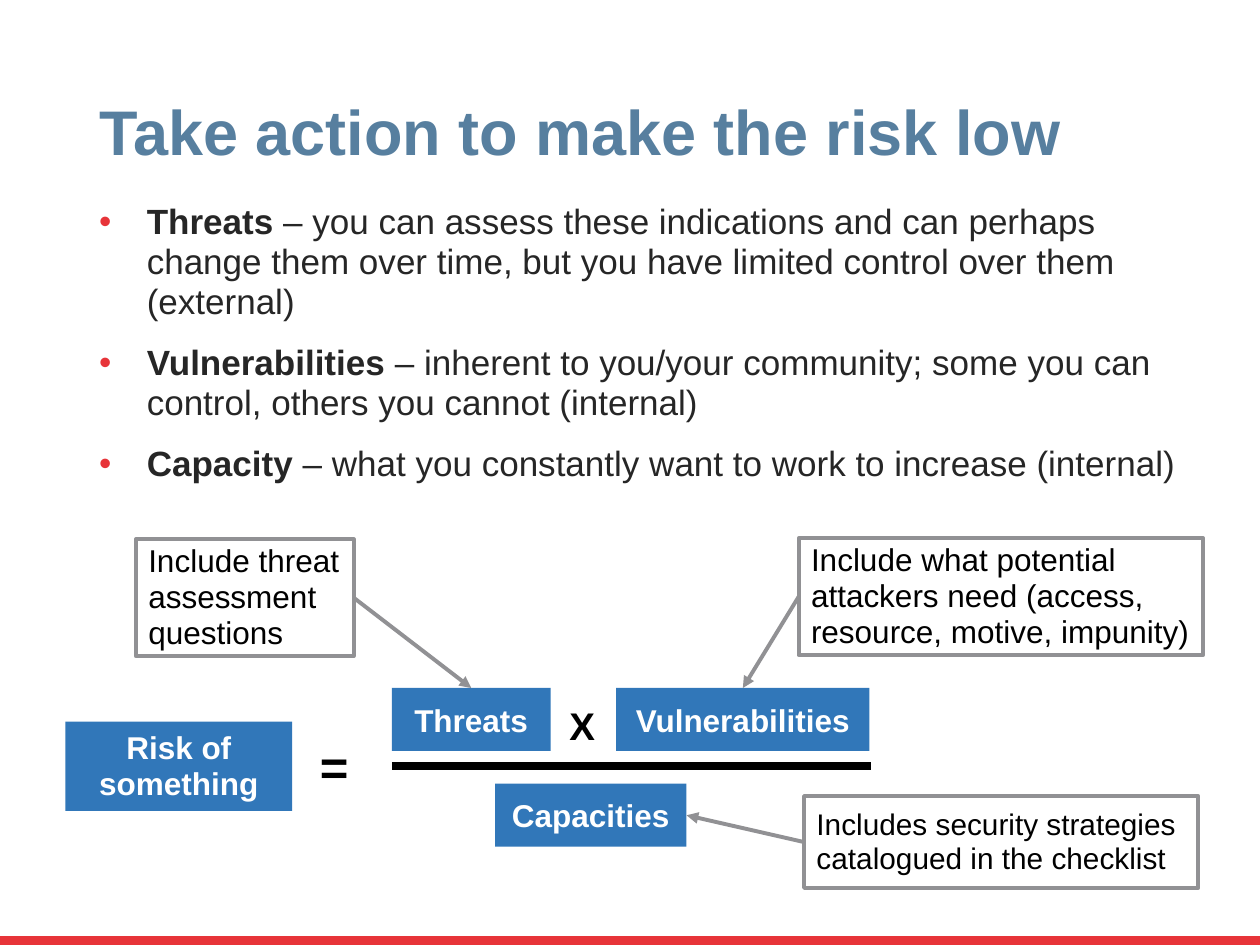
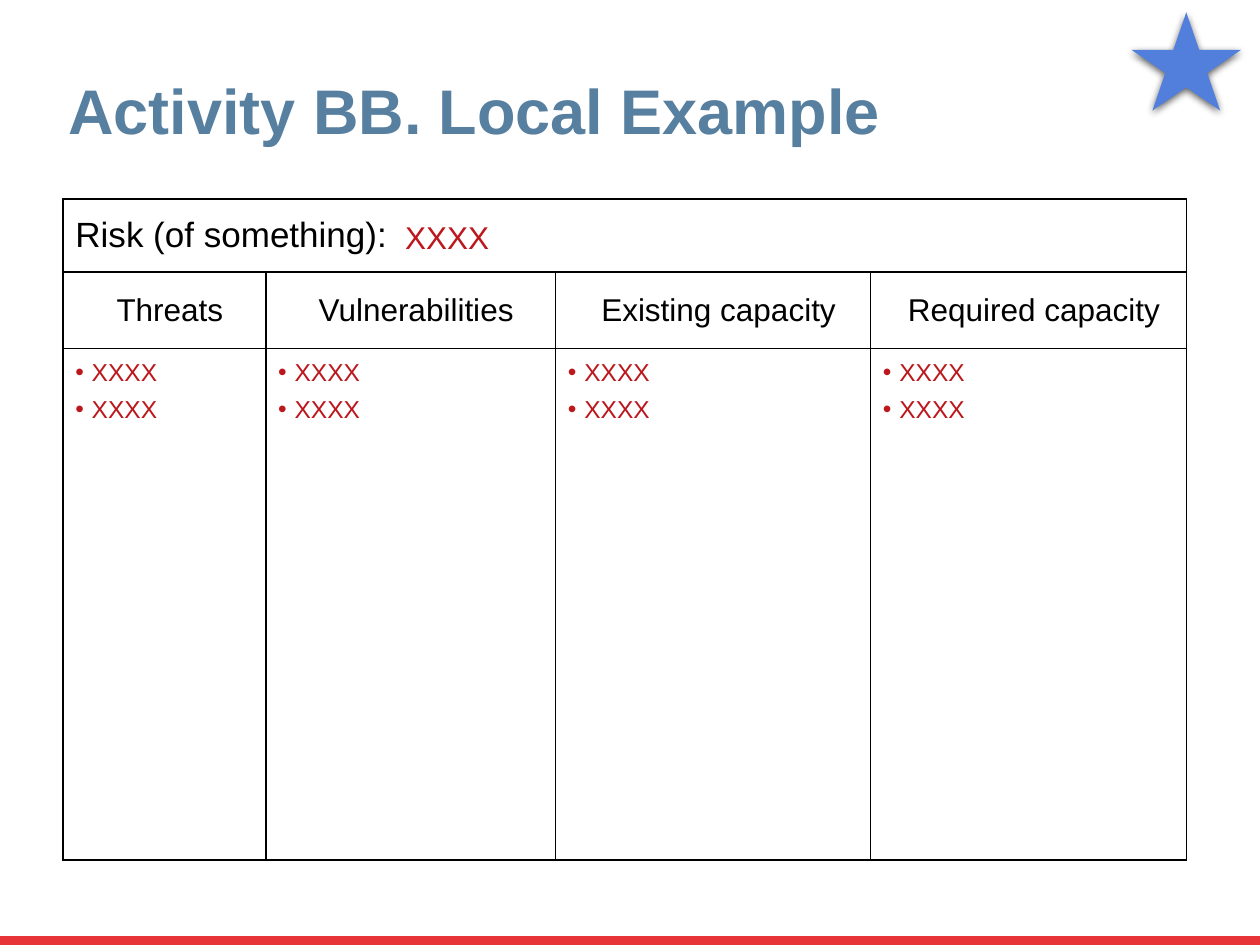
from itertools import accumulate

from lxml import etree
from pptx import Presentation
from pptx import util as u
from pptx.dml.color import RGBColor
from pptx.enum import shapes, text
from pptx.oxml import ns, parse_xml

COLORS = {
    "band": "E73439", "title": "577F9F", "body": "262626", "term": "3177B9",
    "note": "919194", "sample": "BC171D", "star": "527FDB",
    "black": "000000", "white": "FFFFFF",
}
FONT = "Arial"
BULLETS = [
    ("Threats", " – you can assess these indications and can perhaps change them "
     "over time, but you have limited control over them (external)"),
    ("Vulnerabilities", " – inherent to you/your community; some you can control, "
     "others you cannot (internal)"),
    ("Capacity", " – what you constantly want to work to increase (internal)"),
]
HEADERS = ["Threats", "Vulnerabilities", "Existing capacity", "Required capacity"]
COLUMNS = [4.09, 5.84, 6.35, 6.37]
ROWS = [1.47, 1.55, 10.31]
RECT = shapes.MSO_SHAPE.RECTANGLE


def rgb(name):
    """Return the named colour."""
    return RGBColor.from_string(COLORS[name])


def cm(*values):
    """Convert several centimetre values to lengths."""
    return [u.Cm(v) for v in values]


def style(p, size, color, bold=False, align=text.PP_ALIGN.LEFT, spacing=1.0):
    """Format a paragraph and all its runs."""
    p.alignment, p.line_spacing = align, spacing
    for r in p.runs:
        r.font.name, r.font.size, r.font.bold = FONT, u.Pt(size), bold
        r.font.color.rgb = rgb(color)


def add_bullet(p, indent, color):
    """Give a paragraph a hanging bullet."""
    pPr = p._p.get_or_add_pPr()
    pPr.set("marL", str(u.Cm(indent)))
    pPr.set("indent", str(-u.Cm(indent)))
    clr = etree.SubElement(pPr, ns.qn("a:buClr"))
    etree.SubElement(clr, ns.qn("a:srgbClr")).set("val", COLORS[color])
    etree.SubElement(pPr, ns.qn("a:buFont")).set("typeface", FONT)
    etree.SubElement(pPr, ns.qn("a:buChar")).set("char", "•")


def add_box(slide, kind, box, fill, line=None):
    """Add a flat preset shape."""
    sp = slide.shapes.add_shape(kind, *cm(*box))
    sp.shadow.inherit = False
    sp.fill.solid()
    sp.fill.fore_color.rgb = rgb(fill)
    if line:
        sp.line.color.rgb, sp.line.width = rgb(line), u.Pt(2.25)
    else:
        sp.line.fill.background()
    return sp


def add_text(slide, box):
    """Add a wrapping text box and return its frame."""
    tf = slide.shapes.add_textbox(*cm(*box)).text_frame
    tf.word_wrap = True
    return tf


def add_label(slide, box, label, size):
    """Add a one-paragraph text box."""
    tf = add_text(slide, box)
    tf.text = label
    return tf.paragraphs[0]


def add_line(slide, color, width, ends=(0, 0, 0, 0), arrow=False):
    """Add a straight line, with an optional arrowhead."""
    line = slide.shapes.add_connector(shapes.MSO_CONNECTOR.STRAIGHT, *cm(*ends))
    line.line.color.rgb, line.line.width = rgb(color), u.Pt(width)
    if arrow:
        ln = line.line._get_or_add_ln()
        etree.SubElement(ln, ns.qn("a:tailEnd")).set("type", "triangle")
    etree.SubElement(line._element.spPr, ns.qn("a:effectLst"))
    return line


def add_band(prs, layout, slide):
    """Put the bottom band on the shared layout."""
    sp = add_box(slide, RECT, (0, 18.87, 25.4, 0.19), "band")
    layout.shapes.element.append(sp._element)


def add_title(slide, title, left, top):
    """Place and format the title placeholder."""
    sp = slide.shapes.title
    sp.left, sp.top, sp.width, sp.height = cm(left, top, 21.89, 2.21)
    tf = sp.text_frame
    tf.text = title
    tf.auto_size = text.MSO_AUTO_SIZE.NONE
    tf.vertical_anchor = text.MSO_ANCHOR.BOTTOM
    style(tf.paragraphs[0], 36, "title", True, spacing=0.9)


def add_definitions(slide, box):
    """Add the bulleted definitions."""
    tf = add_text(slide, box)
    for i, (term, meaning) in enumerate(BULLETS):
        p = tf.add_paragraph() if i else tf.paragraphs[0]
        add_bullet(p, 0.96, "band")
        for part in (term, meaning):
            p.add_run().text = part
        style(p, 20, "body", spacing=0.95)
        p.runs[0].font.bold = True
        if i:
            p.space_before = u.Pt(12)


def add_equation(slide, box):
    """Draw the risk formula and its annotated terms."""
    x, y = box[:2]

    def place(part):
        """Shift a part into the box."""
        return x + part[0], y + part[1], part[2], part[3]

    terms = {}
    for label, part in [
        ("Risk of something", (0, 3.7, 4.57, 1.8)),
        ("Threats", (6.58, 3.02, 3.2, 1.27)),
        ("Vulnerabilities", (11.1, 3.02, 5.11, 1.27)),
        ("Capacities", (8.66, 4.95, 3.86, 1.27)),
    ]:
        sp = terms[label] = add_box(slide, RECT, place(part), "term")
        sp.text_frame.text = label
        style(sp.text_frame.paragraphs[0], 18, "white", True,
              text.PP_ALIGN.CENTER, 0.95 if label.startswith("Risk") else 1.0)

    add_line(slide, "black", 4.5, (x + 6.58, y + 4.59, x + 16.23, y + 4.59))
    for sign, size, part in [("X", 22, (9.91, 3.17, 0.99, 1.19)),
                             ("=", 28, (4.88, 3.88, 0.91, 1.45))]:
        style(add_label(slide, place(part), sign, size), size, "black", True)

    top, left, right = 0, 1, 3
    for note, size, part, start, term, end in [
        ("Include threat assessment questions", 18,
         (1.42, 0.02, 4.39, 2.36), right, "Threats", top),
        ("Include what potential attackers need (access, resource, motive, impunity)",
         18, (14.78, 0, 8.15, 2.36), left, "Vulnerabilities", top),
        ("Includes security strategies catalogued in the checklist", 17,
         (14.89, 5.2, 7.95, 1.85), left, "Capacities", right),
    ]:
        sp = add_box(slide, RECT, place(part), "white", "note")
        sp.text_frame.text = note
        style(sp.text_frame.paragraphs[0], size, "black", spacing=0.95)
        arrow = add_line(slide, "note", 2.25, arrow=True)
        arrow.begin_connect(sp, start)
        arrow.end_connect(terms[term], end)


def format_cell(cell):
    """Clear a cell's fill and give it margins and thin black borders."""
    cell.vertical_anchor = text.MSO_ANCHOR.MIDDLE
    cell.margin_left, cell.margin_right = cm(0.25, 0.03)
    cell.margin_top = cell.margin_bottom = u.Cm(0.1)
    tcPr = cell._tc.get_or_add_tcPr()
    for side in ("lnL", "lnR", "lnT", "lnB"):
        ln = etree.SubElement(tcPr, ns.qn("a:" + side), w=str(u.Pt(1)))
        fill = etree.SubElement(ln, ns.qn("a:solidFill"))
        etree.SubElement(fill, ns.qn("a:srgbClr")).set("val", COLORS["black"])
    cell.fill.background()


def add_risk_table(slide, box):
    """Add the worksheet table and its sample entries."""
    x, y, w, h = box
    table = slide.shapes.add_table(len(ROWS), len(COLUMNS), *cm(*box)).table
    table.first_row = table.horz_banding = False
    for column, width in zip(table.columns, COLUMNS):
        column.width = u.Cm(width)
    for row, height in zip(table.rows, ROWS):
        row.height = u.Cm(height)
    for cell in table.iter_cells():
        format_cell(cell)
    table.cell(0, 0).merge(table.cell(0, len(COLUMNS) - 1))
    table.cell(0, 0).text = "Risk (of something):"
    style(table.cell(0, 0).text_frame.paragraphs[0], 20, "black")
    for i, header in enumerate(HEADERS):
        cell = table.cell(1, i)
        cell.text = header
        style(cell.text_frame.paragraphs[0], 18, "black", align=text.PP_ALIGN.CENTER)

    sample = add_label(slide, (x + 6.65, y + 0.26, 14.07, 1.02), "XXXX", 18)
    style(sample, 18, "sample")
    lefts = accumulate(COLUMNS[:-1], initial=x)
    for left, width in zip(lefts, COLUMNS):
        tf = add_text(slide, (left, y + ROWS[0] + ROWS[1] + 0.11, width, 1.55))
        tf.text = "XXXX\nXXXX"
        for i, p in enumerate(tf.paragraphs):
            add_bullet(p, 0.33, "sample")
            style(p, 14, "sample", spacing=0.9)
            if i:
                p.space_before = u.Pt(6)


def add_star(slide, box):
    """Add the activity star with a soft shadow below it."""
    sp = add_box(slide, shapes.MSO_SHAPE.STAR_5_POINT, box, "star")
    effects = sp._element.spPr.find(ns.qn("a:effectLst"))
    effects.append(parse_xml(
        f'<a:outerShdw {ns.nsdecls("a")} blurRad="{u.Pt(4.5)}" dist="{u.Pt(1.5)}" '
        f'dir="5400000" rotWithShape="0"><a:srgbClr val="{COLORS["black"]}">'
        '<a:alpha val="63000"/></a:srgbClr></a:outerShdw>'))


def main():
    """Build both slides and save them."""
    prs = Presentation()
    prs.slide_width, prs.slide_height = cm(25.4, 19.05)
    layout = prs.slide_layouts.get_by_name("Title Only")

    risk = prs.slides.add_slide(layout)
    add_band(prs, layout, risk)
    add_title(risk, "Take action to make the risk low", 1.75, 1.32)
    add_definitions(risk, (1.75, 3.96, 22.96, 5.92))
    add_equation(risk, (1.32, 10.85, 22.95, 7.05))

    activity = prs.slides.add_slide(layout)
    add_risk_table(activity, (1.27, 4.01, sum(COLUMNS), sum(ROWS)))
    add_title(activity, "Activity BB. Local Example", 1.12, 0.91)
    add_star(activity, (22.81, 0.25, 2.21, 1.98))
    prs.save("out.pptx")


if __name__ == "__main__":
    main()
